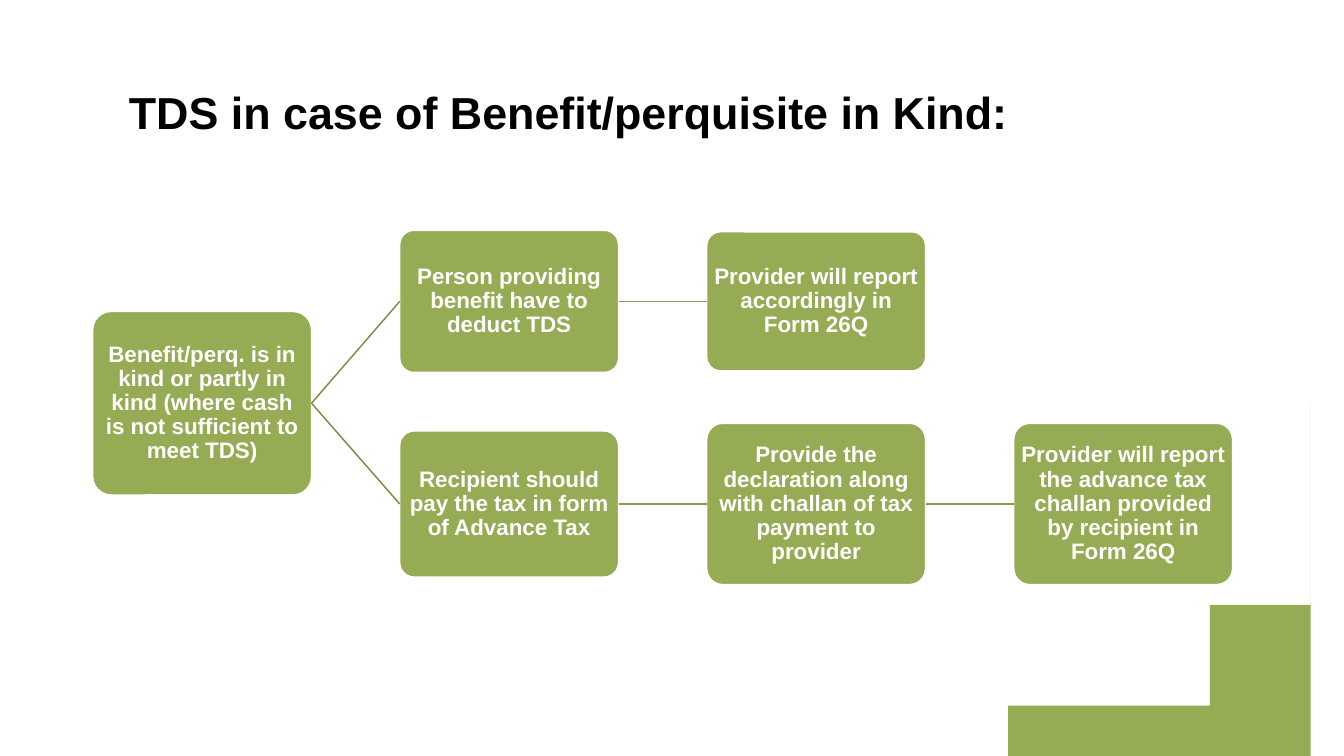
import pptx
import pptx.util
import pptx.dml.color
import pptx.enum.shapes
import pptx.enum.text
from pptx.util import Inches

COLORS = {"green": "95AB54", "fork": "778943", "link": "879B4C",
          "white": "FFFFFF", "black": "000000"}
LEFT, PITCH, WIDTH = 0.92, 3.045, 2.17  # column grid of the boxes


def color(name):
    return pptx.dml.color.RGBColor.from_string(COLORS[name])


def write(shape, text, size, tint, spacing, anchor):
    frame = shape.text_frame
    frame.word_wrap = True
    frame.vertical_anchor = anchor
    par = frame.paragraphs[0]
    par.text = text
    par.line_spacing = spacing
    font = par.font
    font.name, font.size, font.bold = "Arial", pptx.util.Pt(size), True
    font.color.rgb = color(tint)
    return par


def add_corner(slide):
    # Sample the cubic curve that bounds the corner
    curve = [(9.71, 7.5), (11.67, 7.41), (13.23, 5.87), (13.33, 3.96)]
    steps = 48
    points = []
    for i in range(steps + 1):
        t = i / steps
        parts = ((1 - t) ** 3, 3 * t * (1 - t) ** 2, 3 * t * t * (1 - t), t ** 3)
        points.append(tuple(sum(w * p[axis] for w, p in zip(parts, curve))
                            for axis in (0, 1)))
    points += [(13.33, 3.78), (13.33, 7.5)]
    path = slide.shapes.build_freeform(Inches(9.63), Inches(7.5), scale=Inches(1))
    # Start point is given in local units, so rebuild it at that scale
    path = slide.shapes.build_freeform(9.63, 7.5, scale=Inches(1))
    path.add_line_segments(points, close=True)
    corner = path.convert_to_shape()
    corner.shadow.inherit = False
    corner.fill.solid()
    corner.fill.fore_color.rgb = color("green")
    corner.line.fill.background()


def add_title(slide, text):
    box = slide.shapes.add_textbox(Inches(1.18), Inches(0.5), Inches(10.88), Inches(0.92))
    write(box, text, 32, "black", 1.1, pptx.enum.text.MSO_ANCHOR.BOTTOM)


def add_box(slide, col, mid, height, text):
    box = slide.shapes.add_shape(
        pptx.enum.shapes.MSO_SHAPE.ROUNDED_RECTANGLE,
        Inches(LEFT + col * PITCH), Inches(mid - height / 2), Inches(WIDTH), Inches(height))
    box.adjustments[0] = 0.1
    box.shadow.inherit = False
    box.fill.solid()
    box.fill.fore_color.rgb = color("green")
    box.line.color.rgb = color("white")
    box.line.width = pptx.util.Pt(1)
    par = write(box, text, 16, "white", 0.9, pptx.enum.text.MSO_ANCHOR.MIDDLE)
    par.alignment = pptx.enum.text.PP_ALIGN.CENTER
    frame = box.text_frame
    frame.margin_left = frame.margin_right = Inches(0.01)
    frame.margin_top = frame.margin_bottom = Inches(0.01)
    return box


def add_link(slide, start, end, tint):
    line = slide.shapes.add_connector(pptx.enum.shapes.MSO_CONNECTOR.STRAIGHT, 0, 0, 0, 0)
    line.begin_connect(start, 3)  # right side
    line.end_connect(end, 1)  # left side
    line.line.color.rgb = color(tint)
    line.line.width = pptx.util.Pt(1)
    props = line._element.spPr
    props.append(props.makeelement(pptx.oxml.ns.qn("a:effectLst"), {}))


def main():
    deck = pptx.Presentation()
    deck.slide_width, deck.slide_height = Inches(13.33), Inches(7.5)
    slide = deck.slides.add_slide(deck.slide_layouts[6])

    add_corner(slide)
    add_title(slide, "TDS in case of Benefit/perquisite in Kind:")

    # Root and its two branches: middle height, then (box height, text)
    root = add_box(slide, 0, 4, 1.82, "Benefit/perq. is in kind or partly in kind "
                   "(where cash is not sufficient to meet TDS)")
    branches = [
        (2.99, [(1.41, "Person providing benefit have to deduct TDS"),
                (1.38, "Provider will report accordingly in Form 26Q")]),
        (5, [(1.45, "Recipient should pay the tax in form of Advance Tax"),
             (1.6, "Provide the declaration along with challan of tax payment to provider"),
             (1.6, "Provider will report the advance tax challan provided by "
                   "recipient in Form 26Q")]),
    ]
    for mid, steps in branches:
        last = root
        for col, (height, text) in enumerate(steps, 1):
            box = add_box(slide, col, mid, height, text)
            add_link(slide, last, box, "fork" if col == 1 else "link")
            last = box

    deck.save("out.pptx")


if __name__ == "__main__":
    main()
